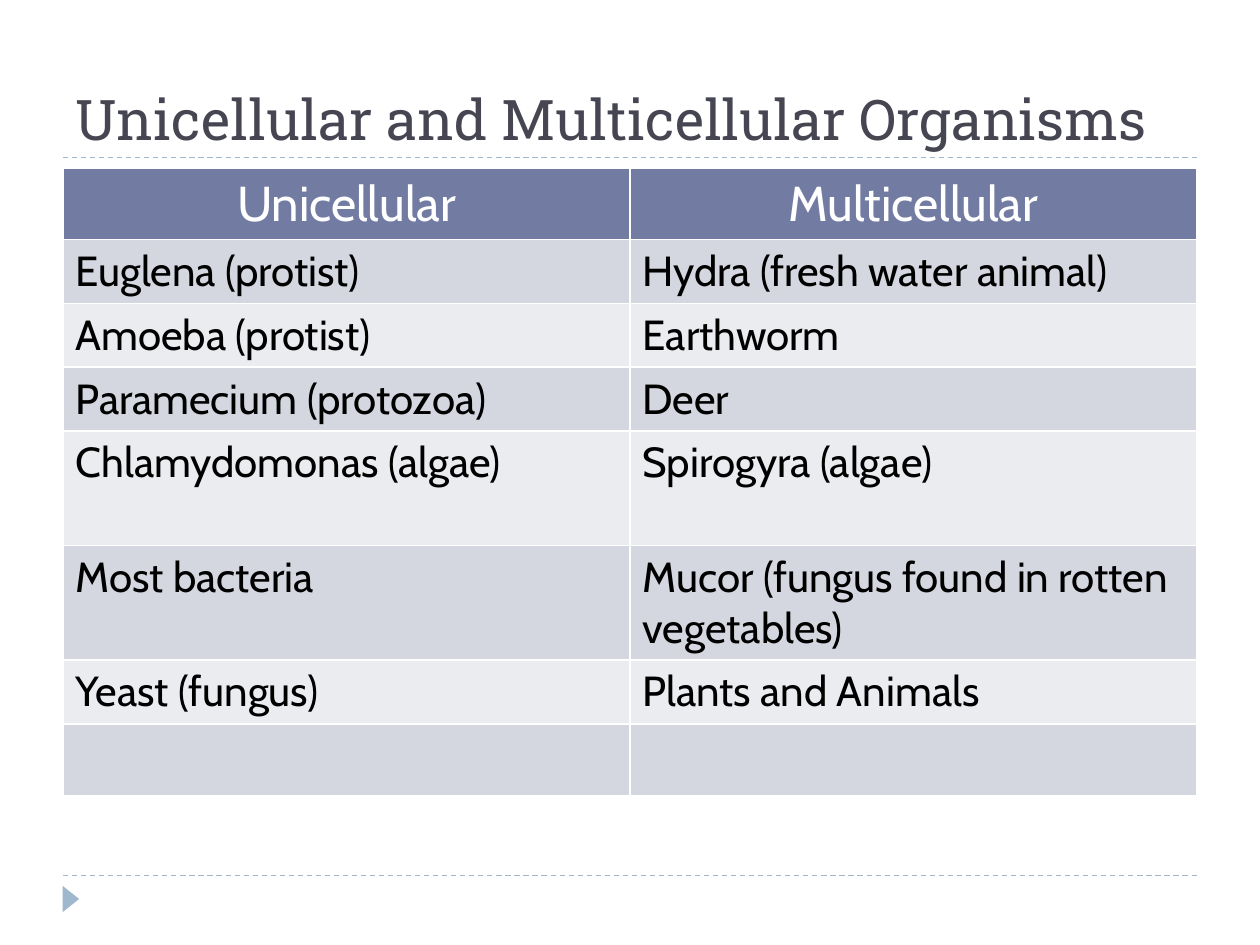
from lxml.etree import SubElement
from pptx import Presentation
from pptx.dml.color import RGBColor
from pptx.enum.dml import MSO_LINE
from pptx.enum.shapes import MSO_CONNECTOR, MSO_SHAPE
from pptx.enum.text import MSO_ANCHOR, PP_ALIGN
from pptx.oxml import parse_xml
from pptx.oxml.ns import nsdecls, qn
from pptx.util import Pt

WHITE = RGBColor(0xFF, 0xFF, 0xFF)
BLACK = RGBColor(0, 0, 0)
SLATE = RGBColor(0x46, 0x46, 0x53)
PALE_BLUE = RGBColor(0x9F, 0xB8, 0xCD)
HEADER_FILL = RGBColor(0x72, 0x7C, 0xA3)
BAND_FILLS = (RGBColor(0xEB, 0xEC, 0xF0), RGBColor(0xD5, 0xD7, 0xE0))

TITLE_FORMAT = {"name": "Roboto Slab", "size": Pt(32), "bold": False}
HEADER_FORMAT = {"name": "Cabin", "size": Pt(28), "bold": False}
BODY_FORMAT = {"name": "Cabin", "size": Pt(24), "bold": False}

ORGANISMS = [
    ("Unicellular", "Multicellular"),
    ("Euglena (protist)", "Hydra (fresh water animal)"),
    ("Amoeba (protist)", "Earthworm"),
    ("Paramecium (protozoa)", "Deer"),
    ("Chlamydomonas (algae)", "Spirogyra (algae)"),
    ("Most bacteria", "Mucor (fungus found in rotten vegetables)"),
    ("Yeast (fungus)", "Plants and Animals"),
    ("", ""),
]
ROW_HEIGHTS = (40.5, 36.5, 36.5, 36.5, 65.4, 65.4, 36.5, 41)


def write_text(paragraph, text, font_format, color):
    """Add one formatted run to a paragraph."""
    run = paragraph.add_run()
    run.text = text
    for name, value in font_format.items():
        setattr(run.font, name, value)
    run.font.color.rgb = color


def add_rule(slide, left, top, width):
    """Draw a dashed horizontal rule."""
    rule = slide.shapes.add_connector(
        MSO_CONNECTOR.STRAIGHT, Pt(left), Pt(top), Pt(left + width), Pt(top))
    rule.line.color.rgb = PALE_BLUE
    rule.line.width = Pt(0.75)
    rule.line.dash_style = MSO_LINE.DASH
    SubElement(rule.element.spPr, qn("a:effectLst"))


def add_title(slide, left, top, width, height):
    """Place the title above its rule."""
    add_rule(slide, left, top + height, width)
    box = slide.shapes.add_textbox(Pt(left), Pt(top), Pt(width), Pt(height))
    frame = box.text_frame
    frame.word_wrap = True
    frame.vertical_anchor = MSO_ANCHOR.BOTTOM
    write_text(frame.paragraphs[0], "Unicellular and Multicellular Organisms",
               TITLE_FORMAT, SLATE)


def add_footer(slide, left, top, width):
    """Place the lower rule and the arrow marker under it."""
    add_rule(slide, left, top, width)
    marker = slide.shapes.add_shape(
        MSO_SHAPE.ISOSCELES_TRIANGLE, Pt(left - 3), Pt(top + 8.6), Pt(15), Pt(9.4))
    marker.rotation = 90
    marker.shadow.inherit = False
    marker.fill.solid()
    marker.fill.fore_color.rgb = PALE_BLUE
    marker.line.fill.background()


def style_cell(cell, fill):
    """Fill a cell and give it thin white borders."""
    cell.fill.solid()
    cell.fill.fore_color.rgb = fill
    properties = cell._tc.get_or_add_tcPr()
    for index, side in enumerate("LRTB"):
        properties.insert(index, parse_xml(
            f'<a:ln{side} {nsdecls("a")} w="{Pt(1)}"><a:solidFill>'
            f'<a:srgbClr val="{WHITE}"/></a:solidFill></a:ln{side}>'))


def add_organism_table(slide, left, top, width):
    """Place the two-column table of organisms."""
    table = slide.shapes.add_table(
        len(ORGANISMS), 2, Pt(left), Pt(top), Pt(width), Pt(sum(ROW_HEIGHTS))).table
    for row_index, (names, height) in enumerate(zip(ORGANISMS, ROW_HEIGHTS)):
        is_header = row_index == 0
        table.rows[row_index].height = Pt(height)
        for column_index, name in enumerate(names):
            cell = table.cell(row_index, column_index)
            style_cell(cell, HEADER_FILL if is_header else BAND_FILLS[row_index % 2])
            paragraph = cell.text_frame.paragraphs[0]
            paragraph.alignment = PP_ALIGN.CENTER if is_header else PP_ALIGN.LEFT
            if name:
                write_text(paragraph, name, HEADER_FORMAT if is_header else BODY_FORMAT,
                           WHITE if is_header else BLACK)


def main():
    """Build and save the presentation."""
    presentation = Presentation()
    presentation.slide_width, presentation.slide_height = Pt(720), Pt(540)
    slide = presentation.slides.add_slide(presentation.slide_layouts[6])
    add_footer(slide, 36, 500.4, 648)
    add_title(slide, 36, 12, 648, 78)
    add_organism_table(slide, 36, 96, 648)
    presentation.save("out.pptx")


if __name__ == "__main__":
    main()
